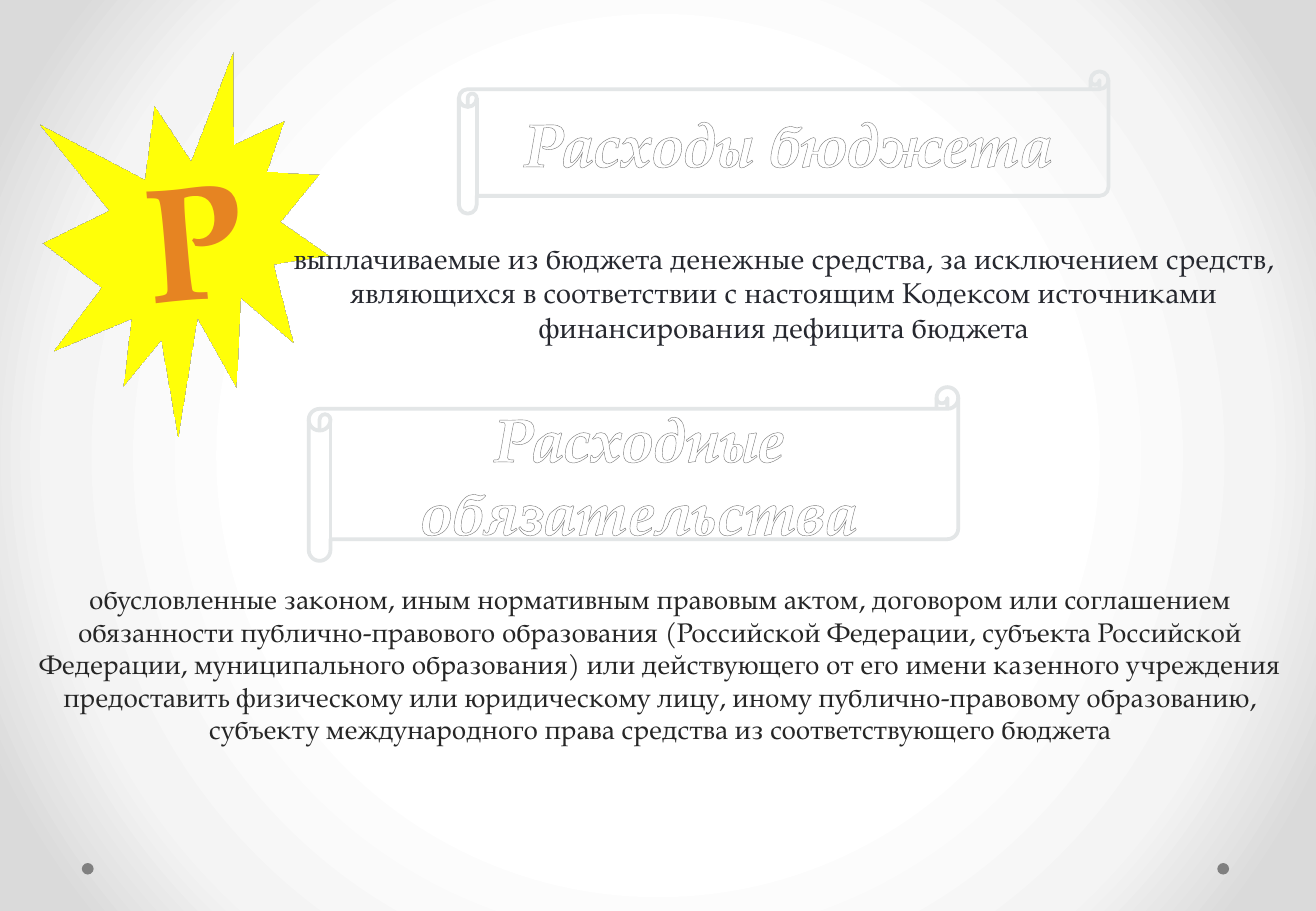
from lxml import etree
from pptx import Presentation
from pptx import util as u
from pptx.dml import color
from pptx.enum import shapes, text
from pptx.oxml import ns

HUES = {
    "sun": "FFFF00", "letter": "E68422", "scroll": "E3E6E7", "dot": "808080",
    "white": "FFFFFF", "grey": "7F7F7F", "edge": "7D7D7D",
    "pale": "F4F4F4", "rim": "DADADA", "ink": "26282F", "dark": "262626",
}
FONT = "TeX Gyre Pagella"
KIND = shapes.MSO_SHAPE


def make(tag, *kids, **attrs):
    node = etree.Element(ns.qn(tag), {k: str(v) for k, v in attrs.items()})
    node.extend(kids)
    return node


def blend(stops, shade):
    marks = [make("a:gs", make("a:srgbClr", val=HUES[hue]), pos=spot * 1000)
             for spot, hue in stops]
    return make("a:gradFill", make("a:gsLst", *marks), shade, rotWithShape=1)


class Deck:
    def __init__(self, wide, high):
        self.show = Presentation()
        self.show.slide_width, self.show.slide_height = u.Pt(wide), u.Pt(high)
        self.slide = self.show.slides.add_slide(self.show.slide_layouts[6])

    def hue(self, name):
        return color.RGBColor.from_string(HUES[name])

    def glow(self, stops):
        self.slide.background.fill.solid()
        pane = self.slide.element.find(".//" + ns.qn("p:bgPr"))
        mid = make("a:fillToRect", l=50000, t=50000, r=50000, b=50000)
        pane.replace(pane[0], blend(stops, make("a:path", mid, path="circle")))

    def shape(self, kind, box, fill=None, line=None):
        item = self.slide.shapes.add_shape(kind, *map(u.Pt, box))
        item.shadow.inherit = False
        if fill:
            item.fill.solid()
            item.fill.fore_color.rgb = self.hue(fill)
        else:
            item.fill.background()
        if line:
            item.line.color.rgb = self.hue(line)
            item.line.width = u.Pt(2.25)
        else:
            item.line.fill.background()
        return item

    def label(self, item, words, size, hue, **form):
        item.text_frame.word_wrap = True
        par = item.text_frame.paragraphs[0]
        par.alignment = text.PP_ALIGN.CENTER
        run = par.add_run()
        run.text = words
        run.font.color.rgb = self.hue(hue)
        for key, val in {"name": FONT, "size": u.Pt(size), **form}.items():
            setattr(run.font, key, val)

    def note(self, box, words, size, hue):
        item = self.slide.shapes.add_textbox(*map(u.Pt, box))
        self.label(item, words, size, hue)
        item.text_frame.auto_size = text.MSO_AUTO_SIZE.SHAPE_TO_FIT_TEXT

    def burst(self, box, words):
        item = self.shape(KIND.EXPLOSION1, box, "sun", "sun")
        self.label(item, words, 96, "letter", bold=True)
        # Turn the star in space
        item.element.spPr.append(make(
            "a:scene3d",
            make("a:camera", prst="perspectiveContrastingRightFacing"),
            make("a:lightRig", rig="threePt", dir="t")))

    def scroll(self, box, words):
        item = self.shape(KIND.HORIZONTAL_SCROLL, box, line="scroll")
        self.label(item, words, 36, "white", bold=True, italic=True)
        # Outlined letters with a gradient fill
        props = item.element.find(".//" + ns.qn("a:rPr"))
        stops = [(0, "white"), (9, "white"), (50, "grey"),
                 (79, "white"), (100, "white")]
        props.replace(props.find(ns.qn("a:solidFill")),
                      blend(stops, make("a:lin", ang=5400000, scaled=0)))
        ink = make("a:solidFill", make("a:srgbClr", val=HUES["edge"]))
        props.insert(0, make("a:ln", ink, w=u.Pt(0.83)))


def main():
    deck = Deck(780, 540)

    # Background and corner dots
    deck.glow([(50, "white"), (76, "pale"), (92, "rim")])
    for left in (721.5, 48.5):
        deck.shape(KIND.OVAL, (left, 511.6, 7, 6.8), "dot")

    # Star with the letter
    deck.burst((0, 35, 233, 222.5), "Р")

    # Terms and their meanings
    deck.scroll((183, 229.5, 385, 103), "Расходные обязательства")
    deck.note((166.5, 139, 596, 69),
              "выплачиваемые из бюджета денежные средства, за исключением "
              "средств, являющихся в соответствии с настоящим Кодексом "
              "источниками финансирования дефицита бюджета", 17, "ink")
    deck.scroll((272, 42.3, 385, 84.4), "Расходы бюджета")
    deck.note((13.5, 342, 756, 104.5),
              "обусловленные законом, иным нормативным правовым актом, "
              "договором или соглашением обязанности публично-правового "
              "образования (Российской Федерации, субъекта Российской "
              "Федерации, муниципального образования) или действующего от "
              "его имени казенного учреждения предоставить физическому или "
              "юридическому лицу, иному публично-правовому образованию, "
              "субъекту международного права средства из соответствующего "
              "бюджета", 16, "dark")

    deck.show.save("out.pptx")


if __name__ == "__main__":
    main()
